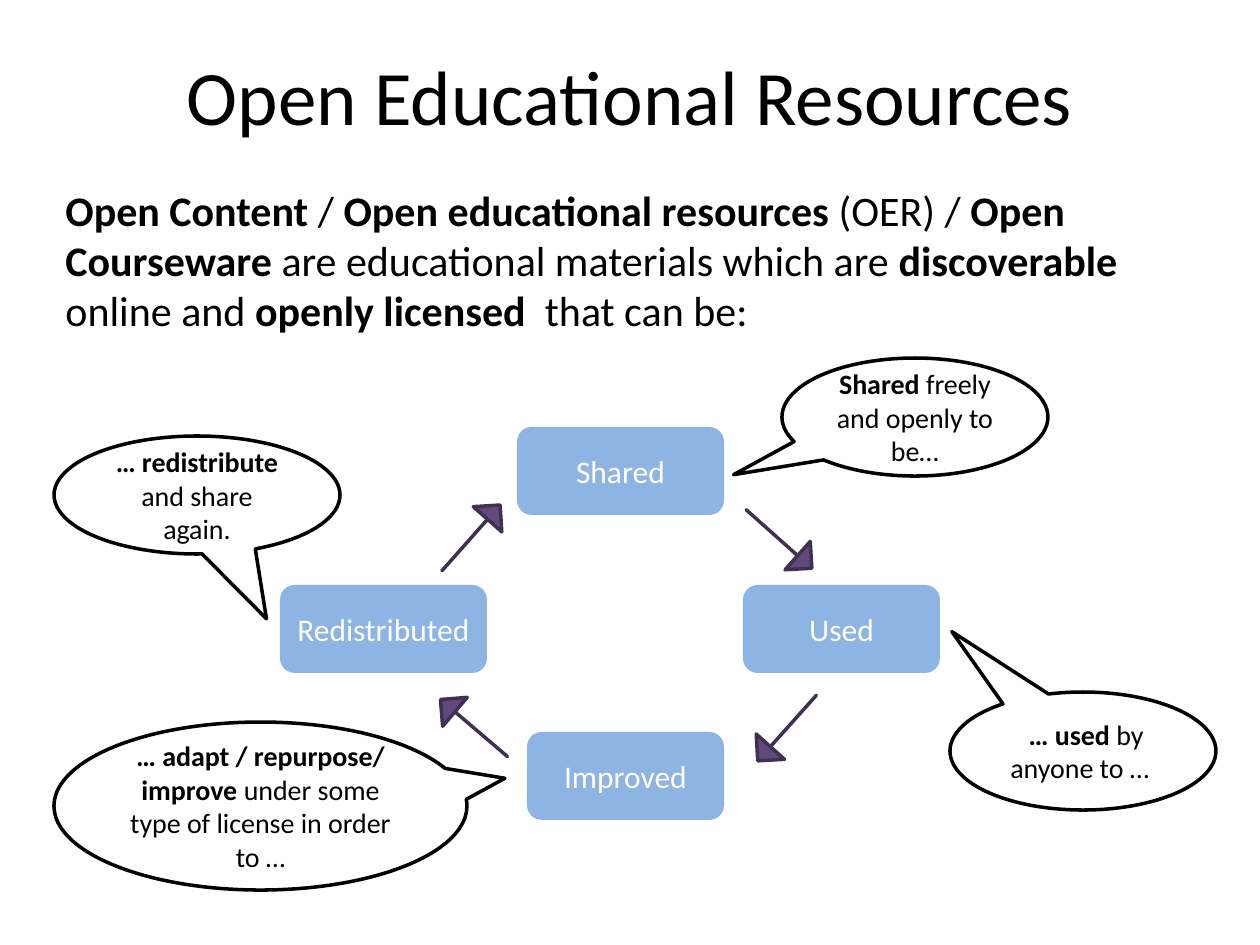
from pptx import Presentation, util as u
from pptx.dml.color import RGBColor
from pptx.enum import shapes, text

PX = 914400 / 126
KIND = shapes.MSO_SHAPE
MID = text.MSO_ANCHOR.MIDDLE
BLACK, WHITE, BLUE = "000000", "FFFFFF", "8EB4E3"
PLUM, DUSK = "604A7B", "403152"

# label, x, y, width
NODES = [
    ("Shared", 463, 69, 207),
    ("Used", 689, 227, 197),
    ("Improved", 473, 374, 197),
    ("Redistributed", 226, 227, 207),
]
# x, y, angle
ARROWS = [
    (681, 162, 41.7),
    (689, 351, 131.8),
    (376, 351, 220.4),
    (373, 161, 311.5),
]
# words, box, tip offset as a share of the box
NOTES = [
    ("**Shared** freely and openly to be…", (728, 0, 266, 118), (-0.682, 0.489)),
    (" **… used **by anyone to … ", (896, 334, 266, 118), (-0.493, -1.012)),
    ("**… adapt / repurpose/ improve **under some type of license in order to …",
     (0, 364, 413, 168), (0.592, -0.165)),
    ("**… redistribute **and share again.", (0, 78, 286, 118), (0.243, 1.049)),
]
INTRO = ("**Open Content **/ **Open educational resources **(OER) / "
         "**Open Courseware **are educational materials which are "
         "**discoverable** online and **openly licensed**  that can be:")


def emu(*px):
    return [u.Emu(round(n * PX)) for n in px]


def rgb(code):
    return RGBColor.from_string(code)


def write(shape, words, size, color=BLACK, align=text.PP_ALIGN.CENTER, **frame):
    """Fill a shape with text; parts between ** marks are bold."""
    tf = shape.text_frame
    for key, val in {"word_wrap": True, **frame}.items():
        setattr(tf, key, val)
    para = tf.paragraphs[0]
    para.alignment = align
    for i, part in enumerate(words.split("**")):
        if not part:
            continue
        run = para.add_run()
        run.text = part
        look = {"name": "Calibri", "size": u.Pt(size), "bold": i % 2 == 1}
        for key, val in look.items():
            setattr(run.font, key, val)
        run.font.color.rgb = rgb(color)


def draw(slide, kind, box, fill, line=None, adjust=()):
    shape = slide.shapes.add_shape(kind, *emu(*box))
    shape.shadow.inherit = False
    shape.fill.solid()
    shape.fill.fore_color.rgb = rgb(fill)
    if line:
        shape.line.color.rgb = rgb(line)
        shape.line.width = u.Pt(2)
    else:
        shape.line.fill.background()
    for i, val in enumerate(adjust):
        shape.adjustments[i] = val
    return shape


def title(slide, box):
    area = slide.shapes.add_textbox(*emu(*box))
    write(area, "Open Educational Resources", 44, vertical_anchor=MID)


def intro(slide, box):
    area = slide.shapes.add_textbox(*emu(*box))
    write(area, INTRO, 24, align=text.PP_ALIGN.LEFT)


def cycle(slide, box):
    """Four steps in a ring, with arrows between them and a note on each."""
    left, top = box[:2]
    for label, x, y, wide in NODES:
        node = draw(slide, KIND.ROUNDED_RECTANGLE,
                    (left + x, top + y, wide, 88), BLUE)
        write(node, label, 18, WHITE, vertical_anchor=MID,
              margin_left=0, margin_right=0)
    for x, y, angle in ARROWS:
        arrow = draw(slide, KIND.NOTCHED_RIGHT_ARROW,
                     (left + x, top + y, 88, 38), PLUM, DUSK, (0, 0.5))
        arrow.rotation = angle
    for words, (x, y, wide, high), tip in NOTES:
        note = draw(slide, KIND.OVAL_CALLOUT,
                    (left + x, top + y, wide, high), WHITE, BLACK, tip)
        write(note, words, 16, vertical_anchor=MID)


def main():
    deck = Presentation()
    deck.slide_width, deck.slide_height = emu(1260, 945)
    slide = deck.slides.add_slide(deck.slide_layouts[6])
    title(slide, (63, 16, 1134, 158))
    intro(slide, (53, 178, 1092, 165))
    cycle(slide, (54, 358, 1162, 532))
    deck.save("out.pptx")


if __name__ == "__main__":
    main()
